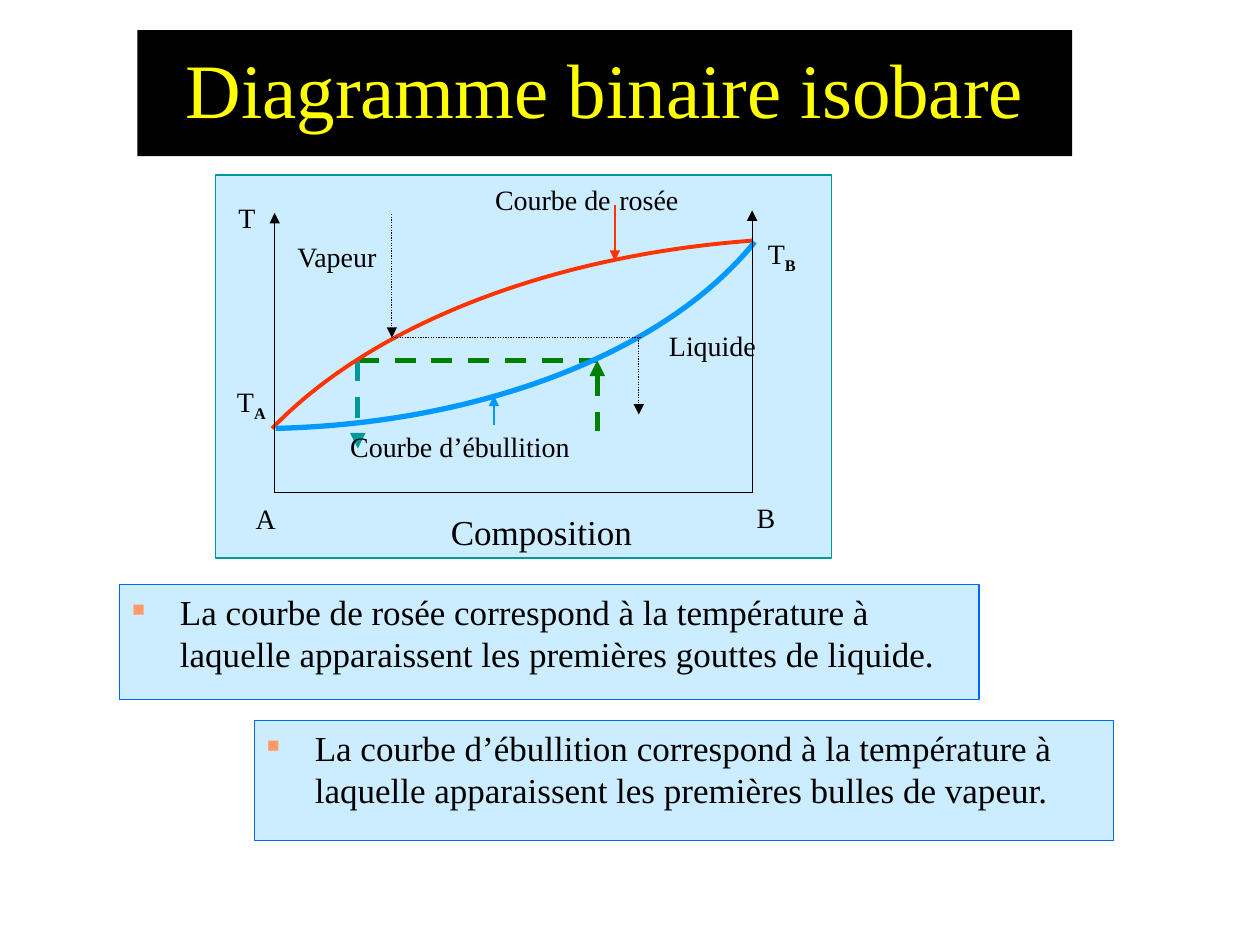
from dataclasses import dataclass

from lxml.etree import SubElement
from pptx import Presentation
from pptx.dml.color import RGBColor
from pptx.enum.dml import MSO_LINE
from pptx.enum.shapes import MSO_CONNECTOR, MSO_SHAPE
from pptx.enum.text import MSO_ANCHOR, PP_ALIGN
from pptx.oxml.ns import qn
from pptx.util import Inches, Pt

COLUMNS, ROWS = 100, 75
CELL = Inches(0.1)


@dataclass(frozen=True)
class Theme:
    font: str = "Times New Roman"
    ink: str = "010000"
    title: str = "FFFF00"
    panel: str = "CCECFF"
    panel_edge: str = "009999"
    note_edge: str = "0066FF"
    bullet: str = "FF9966"
    dew: str = "FF3300"
    boiling: str = "0099FF"
    heating: str = "008000"
    vapour: str = "009999"
    title_size: int = 44
    body_size: int = 20
    label_size: int = 16
    thin: float = 0.75
    thick: float = 3


THEME = Theme()


def grid(*cells):
    """Turn grid positions into slide lengths."""
    return [round(cell * CELL) for cell in cells]


def color(code):
    return RGBColor.from_string(code)


def add_span(para, text, size, ink=THEME.ink):
    span = para.add_run()
    span.text = text
    span.font.name = THEME.font
    span.font.size = Pt(size)
    span.font.color.rgb = color(ink)
    return span


def add_panel(page, area, fill, edge=None):
    panel = page.shapes.add_shape(MSO_SHAPE.RECTANGLE, *grid(*area))
    panel.shadow.inherit = False
    panel.fill.solid()
    panel.fill.fore_color.rgb = color(fill)
    if edge:
        panel.line.color.rgb = color(edge)
        panel.line.width = Pt(THEME.thin)
    else:
        panel.line.fill.background()
    panel.text_frame.word_wrap = True
    return panel


def add_title(page, area, text):
    frame = add_panel(page, area, THEME.ink).text_frame
    frame.vertical_anchor = MSO_ANCHOR.MIDDLE
    para = frame.paragraphs[0]
    para.alignment = PP_ALIGN.CENTER
    para.line_spacing = 0.9
    add_span(para, text, THEME.title_size, THEME.title)


def add_note(page, area, text):
    frame = add_panel(page, area, THEME.panel, THEME.note_edge).text_frame
    frame.vertical_anchor = MSO_ANCHOR.TOP
    para = frame.paragraphs[0]
    para.alignment = PP_ALIGN.LEFT
    settings = para._p.get_or_add_pPr()
    settings.set("marL", str(Inches(0.38)))
    settings.set("indent", str(-Inches(0.38)))
    bullet_color = SubElement(settings, qn("a:buClr"))
    SubElement(bullet_color, qn("a:srgbClr"), val=THEME.bullet)
    SubElement(settings, qn("a:buSzPct"), val="50000")
    SubElement(settings, qn("a:buChar"), char="■")
    add_span(para, text, THEME.body_size)


def add_label(page, area, *parts):
    """Write (text, size) parts on one unwrapped line without margins."""
    frame = page.shapes.add_textbox(*grid(*area)).text_frame
    frame.word_wrap = False
    frame.margin_left = frame.margin_right = 0
    frame.margin_top = frame.margin_bottom = 0
    for text, size in parts:
        add_span(frame.paragraphs[0], text, size)


def add_axis_label(page, area, text, subscript="", size=THEME.label_size,
                   alignment=PP_ALIGN.CENTER):
    frame = page.shapes.add_textbox(*grid(*area)).text_frame
    frame.word_wrap = True
    para = frame.paragraphs[0]
    para.alignment = alignment
    add_span(para, text, size)
    if subscript:
        span = add_span(para, subscript, size)
        span.font.bold = True
        span.font._element.set("baseline", "-25000")


def add_line(page, start, end, ink, width=THEME.thin, dash=None, arrow=None):
    """Draw a straight line; arrow is headEnd (start) or tailEnd (end)."""
    line = page.shapes.add_connector(MSO_CONNECTOR.STRAIGHT, *grid(*start, *end))
    line.line.color.rgb = color(ink)
    line.line.width = Pt(width)
    if dash:
        line.line.dash_style = dash
    if arrow:
        SubElement(line.line._get_or_add_ln(), qn("a:" + arrow), type="triangle")
    SubElement(line._element.spPr, qn("a:effectLst"))


def add_curve(page, points, ink, width):
    """Draw one cubic curve through start, two controls and end."""
    start, *rest = [grid(*point) for point in points]
    builder = page.shapes.build_freeform(*start)
    builder.add_line_segments(rest, close=False)
    curve = builder.convert_to_shape()
    segments = list(curve._element.iter(qn("a:lnTo")))
    outline = segments[0].getparent()
    bezier = SubElement(outline, qn("a:cubicBezTo"))
    for segment in segments:
        bezier.append(segment[0])
        outline.remove(segment)
    curve.shadow.inherit = False
    curve.fill.background()
    curve.line.color.rgb = color(ink)
    curve.line.width = Pt(width)


def add_diagram(page):
    label, body = THEME.label_size, THEME.body_size
    add_panel(page, (17.1, 13.9, 48.9, 30.4), THEME.panel, THEME.panel_edge)
    add_label(page, (23.6, 19, 6.4, 2.7), ("Vapeur", label))
    add_label(page, (53.1, 26.1, 7, 2.7), ("Liquide", label))

    # Heating of the liquid
    dashed = {"width": THEME.thick, "dash": MSO_LINE.DASH}
    left, right, level = 28.4, 47.4, 28.6
    add_line(page, (left, level), (right, level), THEME.heating, **dashed)
    add_line(page, (right, level), (right, 34.2), THEME.heating,
             arrow="headEnd", **dashed)
    add_line(page, (left, level), (left, 35.6), THEME.vapour,
             arrow="tailEnd", **dashed)

    # Dew curve
    add_curve(page, [(59.7, 19.1), (43.6, 20.3), (29.5, 25.8), (21.6, 34)],
              THEME.dew, 2.25)
    add_label(page, (39.3, 13.9, 15.4, 3.4), ("Courbe de", label), (" ", body),
              ("rosée", label))
    add_line(page, (48.8, 16.3), (48.8, 20.7), THEME.dew, arrow="tailEnd")

    # Boiling curve
    add_curve(page, [(21.9, 34), (38.3, 33.6), (52.9, 27.9), (59.9, 19.2)],
              THEME.boiling, THEME.thick)
    add_label(page, (27.8, 33.5, 18.4, 3.4), ("Courbe d’ébullition", label),
              (" ", body))
    add_line(page, (39.2, 33.7), (39.2, 31.4), THEME.boiling, arrow="tailEnd")

    # Cooling of the vapour
    dotted = {"ink": THEME.ink, "dash": MSO_LINE.ROUND_DOT}
    add_line(page, (31.1, 17), (31.1, 26.8), arrow="tailEnd", **dotted)
    add_line(page, (31.1, 26.8), (50.9, 26.8), **dotted)
    add_line(page, (50.7, 26.8), (50.7, 32.9), arrow="tailEnd", **dotted)

    # Axes
    left, right, base = 21.8, 59.7, 39.1
    add_line(page, (left, base), (right + 0.1, base), THEME.ink)
    for column, top in ((left, 16.9), (right, 16.7)):
        add_line(page, (column, base), (column, top), THEME.ink, arrow="tailEnd")
    for column, row, width, text, subscript in (
        (17.6, 15.4, 4, "T", ""),
        (17.3, 30, 5.3, "T", "A"),
        (59.4, 18.3, 5.3, "T", "B"),
        (19.1, 39.3, 4, "A", ""),
        (58.8, 39.2, 4, "B", ""),
    ):
        add_axis_label(page, (column, row, width, 3.7), text, subscript)
    add_axis_label(page, (34.8, 40, 20, 4.3), "Composition", size=body,
                   alignment=PP_ALIGN.LEFT)


def main():
    deck = Presentation()
    deck.slide_width, deck.slide_height = grid(COLUMNS, ROWS)
    page = deck.slides.add_slide(deck.slide_layouts[6])
    add_title(page, (10.9, 2.4, 74.2, 10), "Diagramme binaire isobare")
    add_diagram(page)
    add_note(page, (9.5, 46.4, 68.2, 9.1),
             "La courbe de rosée correspond à la température à laquelle "
             "apparaissent les premières gouttes de liquide.")
    add_note(page, (20.2, 57.2, 68.2, 9.5),
             "La courbe d’ébullition correspond à la température à laquelle "
             "apparaissent les premières bulles de vapeur.")
    deck.save("out.pptx")


if __name__ == "__main__":
    main()
